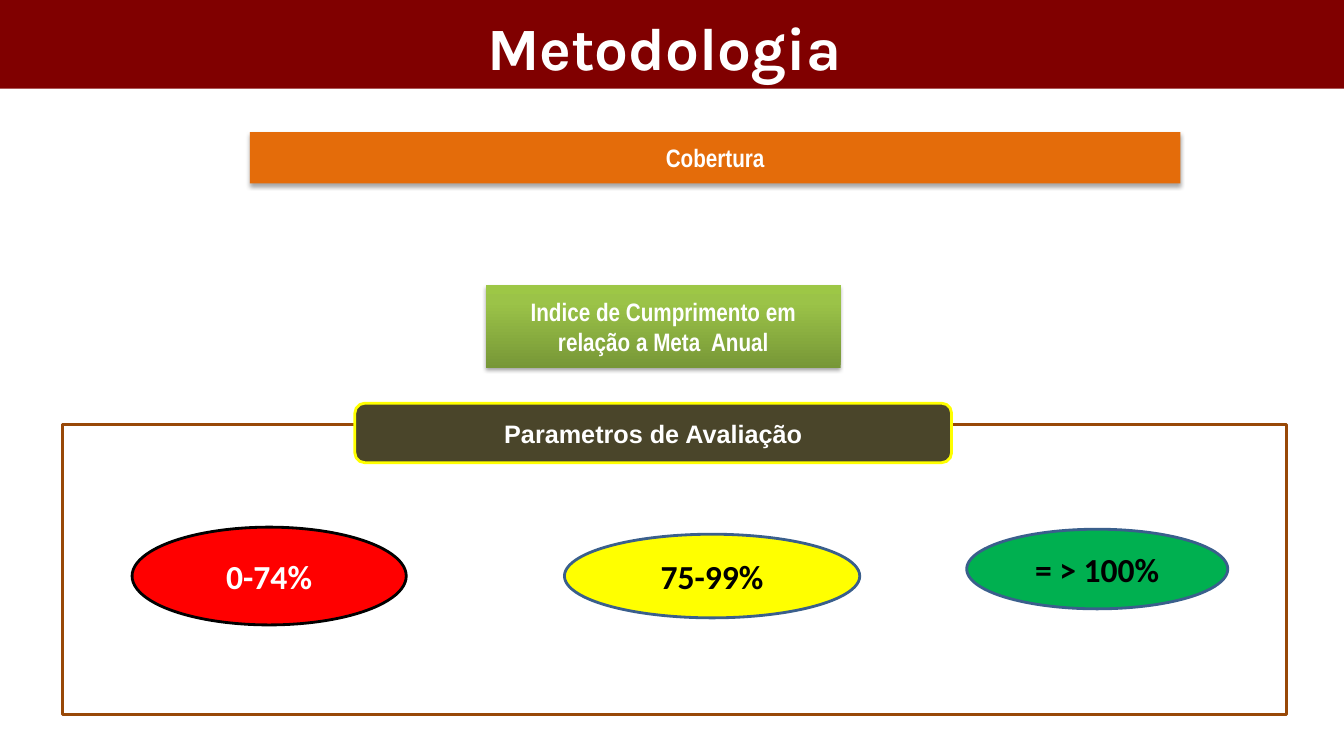
from dataclasses import dataclass

from lxml import etree
from pptx import Presentation
from pptx.dml.color import RGBColor
from pptx.enum.shapes import MSO_SHAPE
from pptx.enum.text import MSO_ANCHOR, PP_ALIGN
from pptx.oxml.ns import qn
from pptx.slide import Slide
from pptx.util import Inches, Pt

RECT = MSO_SHAPE.RECTANGLE
ROUND = MSO_SHAPE.ROUNDED_RECTANGLE
OVAL = MSO_SHAPE.OVAL
MIDDLE = MSO_ANCHOR.MIDDLE
TOP = MSO_ANCHOR.TOP
CENTER = PP_ALIGN.CENTER

WIDTH, HEIGHT = Inches(13.33), Inches(7.5)
COLS, ROWS = 160, 90
WHITE, BLACK, YELLOW, BLUE = "FFFFFF", "000000", "FFFF00", "3A5F8C"
GREENS = ((0, "779737"), (80, "9BC348"), (100, "9DC746"))


@dataclass(frozen=True)
class Label:
    text: str
    font: str
    size: float
    color: str = WHITE
    anchor: MSO_ANCHOR = MIDDLE
    inset: float = 0.05


@dataclass(frozen=True)
class Box:
    col: float
    row: float
    cols: float
    rows: float
    fill: str = ""
    line: str = ""
    kind: MSO_SHAPE = RECT
    label: Label | None = None
    stops: tuple[tuple[int, str], ...] = ()
    shade: bool = False


BOXES = (
    Box(0, 0, COLS, 10.56, "800000",
        label=Label("Metodologia ", "Karla", 42.9, anchor=TOP, inset=0.1)),
    Box(7.44, 50.52, 145.68, 34.56, WHITE, "984807"),
    Box(15.72, 62.76, 32.64, 11.64, "FF0000", BLACK, OVAL,
        Label("0-74%", "Calibri", 24)),
    Box(67.2, 63.6, 35.16, 9.96, YELLOW, BLUE, OVAL,
        Label("75-99%", "Calibri", 24, BLACK)),
    Box(115.08, 63, 31.08, 9.48, "00B050", BLUE, OVAL,
        Label("= > 100%", "Calibri", 24, BLACK)),
    Box(42.24, 48, 71.04, 7.08, "4A452A", YELLOW, ROUND,
        Label("Parametros de Avaliação", "Arial", 18)),
    Box(57.84, 33.96, 42.24, 9.84, stops=GREENS, shade=True,
        label=Label("Indice de Cumprimento em relação a Meta  Anual",
                    "Arial Narrow", 18)),
    Box(29.76, 15.72, 110.76, 6.12, "E46C0A", shade=True,
        label=Label("Cobertura", "Arial Narrow", 18)),
)


def tint(code: str) -> RGBColor:
    return RGBColor.from_string(code)


def blend(shape, stops: tuple[tuple[int, str], ...]) -> None:
    shape.fill.gradient()
    shape.fill.gradient_angle = 90
    group = shape._element.spPr.find(qn("a:gradFill")).find(qn("a:gsLst"))
    for old in list(group):
        group.remove(old)
    for share, code in stops:
        stop = etree.SubElement(group, qn("a:gs"), pos=str(share * 1000))
        etree.SubElement(stop, qn("a:srgbClr"), val=code)


def cast(shape) -> None:
    group = shape._element.spPr.find(qn("a:effectLst"))
    shade = etree.SubElement(
        group, qn("a:outerShdw"), blurRad=str(Pt(3.1)), dist=str(Pt(1.8)),
        dir="5400000", rotWithShape="0")
    color = etree.SubElement(shade, qn("a:srgbClr"), val=BLACK)
    etree.SubElement(color, qn("a:alpha"), val="35000")


def write(shape, label: Label) -> None:
    frame = shape.text_frame
    frame.word_wrap = True
    frame.vertical_anchor = label.anchor
    frame.margin_top = Inches(label.inset)
    para = frame.paragraphs[0]
    para.alignment = CENTER
    run = para.add_run()
    run.text = label.text
    run.font.name = label.font
    run.font.size = Pt(label.size)
    run.font.bold = True
    run.font.color.rgb = tint(label.color)


def draw(slide: Slide, box: Box) -> None:
    shape = slide.shapes.add_shape(
        box.kind,
        round(WIDTH * box.col / COLS), round(HEIGHT * box.row / ROWS),
        round(WIDTH * box.cols / COLS), round(HEIGHT * box.rows / ROWS))
    shape.shadow.inherit = False
    if box.stops:
        blend(shape, box.stops)
    else:
        shape.fill.solid()
        shape.fill.fore_color.rgb = tint(box.fill)
    if box.line:
        shape.line.color.rgb = tint(box.line)
        shape.line.width = Pt(2)
    else:
        shape.line.fill.background()
    if box.shade:
        cast(shape)
    if box.label:
        write(shape, box.label)


def main() -> None:
    deck = Presentation()
    deck.slide_width, deck.slide_height = WIDTH, HEIGHT
    slide = deck.slides.add_slide(deck.slide_layouts[6])
    for box in BOXES:
        draw(slide, box)
    deck.save("out.pptx")


if __name__ == "__main__":
    main()
